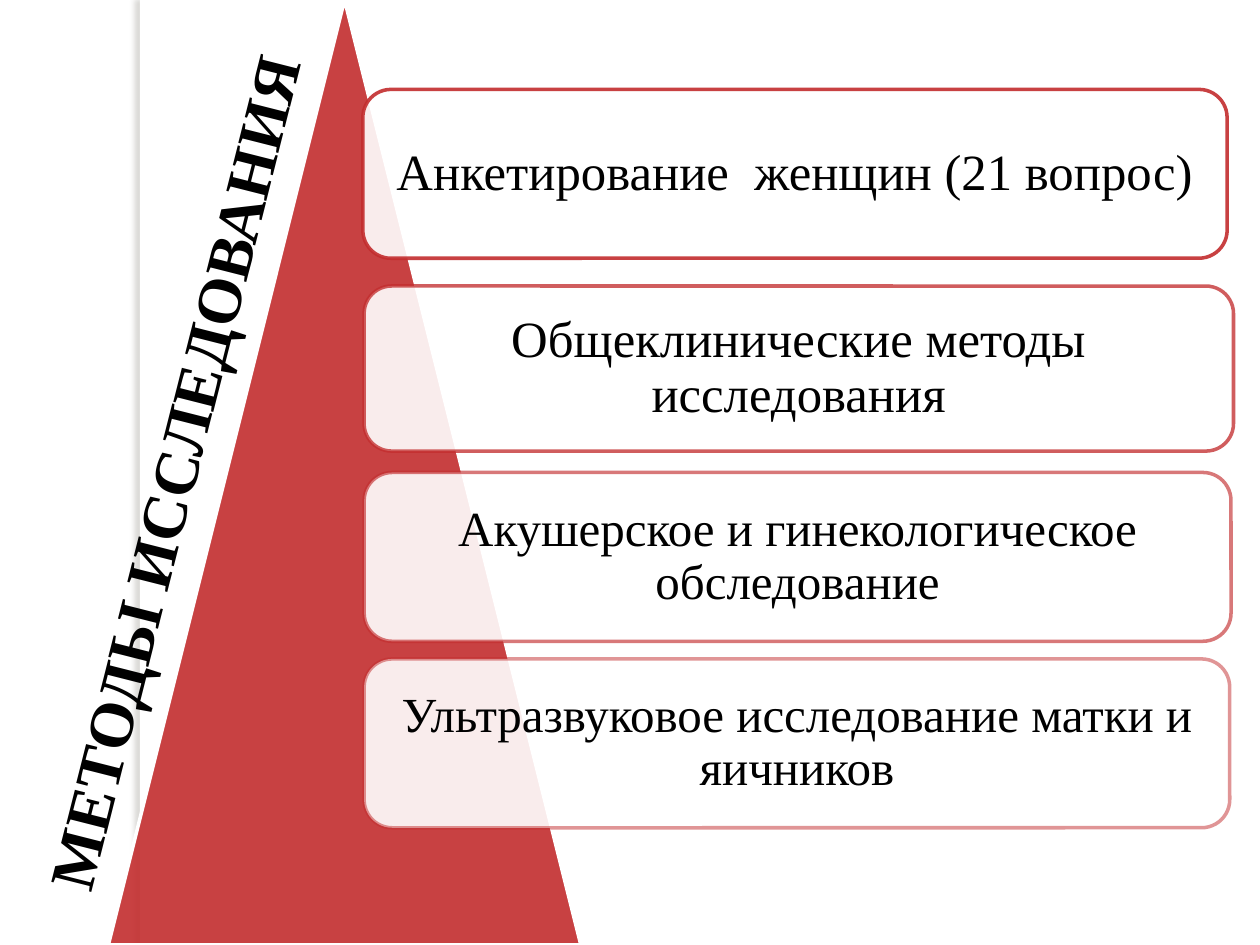
from dataclasses import dataclass

from lxml import etree
from pptx import Presentation
from pptx import util as u
from pptx.dml.color import RGBColor
from pptx.enum import shapes as sh, text as tx
from pptx.oxml.ns import qn

RED, WHITE, BLACK = "C32D2E", "FFFFFF", "000000"
FONT = "Times New Roman"


@dataclass
class Card:
    text: str
    left: float
    top: float
    width: float
    height: float
    size: int
    alpha: int


CARDS = [
    Card("Анкетирование  женщин (21 вопрос)", 2.88, 0.71, 6.86, 1.34, 29, 90),
    Card("Общеклинические методы исследования", 2.89, 2.27, 6.9, 1.31, 29, 77),
    Card("Акушерское и гинекологическое обследование",
         2.89, 3.75, 6.88, 1.34, 28, 63),
    Card("Ультразвуковое исследование матки и яичников",
         2.89, 5.23, 6.87, 1.34, 28, 50),
]


def paint(fill, color: str, alpha: int = 100) -> None:
    """Make a fill solid, with opacity in percent."""
    fill.solid()
    fill.fore_color.rgb = RGBColor.from_string(color)
    if alpha < 100:
        node = fill._xPr.find(qn("a:solidFill"))[0]
        etree.SubElement(node, qn("a:alpha"), val=str(alpha * 1000))


def place(shape, left: float, top: float, width: float, height: float) -> None:
    shape.left, shape.top = u.Inches(left), u.Inches(top)
    shape.width, shape.height = u.Inches(width), u.Inches(height)


def add_form(slide, kind, box: tuple, alpha: int = 100, color: str = WHITE):
    shape = slide.shapes.add_shape(kind, 0, 0, 0, 0)
    place(shape, *box)
    shape.shadow.inherit = False
    paint(shape.fill, color, alpha)
    return shape


def write(shape, words: str, size: int, bold: bool = False) -> None:
    """Set centred text in the slide's font."""
    frame = shape.text_frame
    frame.text = words
    frame.vertical_anchor = tx.MSO_ANCHOR.MIDDLE
    para = frame.paragraphs[0]
    para.alignment = tx.PP_ALIGN.CENTER
    font = para.runs[0].font
    font.name, font.size, font.bold = FONT, u.Pt(size), bold
    paint(font.fill, BLACK)


def add_strip(slide) -> None:
    """Draw the white side strip that casts a shadow to the left."""
    strip = add_form(slide, sh.MSO_SHAPE.RECTANGLE, (1.11, 0, 0.08, 7.5))
    strip.line.fill.background()
    effects = strip._element.spPr.find(qn("a:effectLst"))
    shadow = etree.SubElement(
        effects, qn("a:outerShdw"), blurRad=str(u.Pt(3)), dist=str(u.Pt(3)),
        dir="10800000", algn="tl", rotWithShape="0")
    tint = etree.SubElement(shadow, qn("a:srgbClr"), val="736F63")
    etree.SubElement(tint, qn("a:alpha"), val="25000")


def add_peak(slide) -> None:
    peak = add_form(slide, sh.MSO_SHAPE.ISOSCELES_TRIANGLE,
                    (0.86, 0, 3.75, 7.5), 90, RED)
    paint(peak.line.fill, WHITE)
    peak.line.width = u.Pt(2)


def add_card(slide, card: Card) -> None:
    box = (card.left, card.top, card.width, card.height)
    shape = add_form(slide, sh.MSO_SHAPE.ROUNDED_RECTANGLE, box, 90)
    paint(shape.line.fill, RED, card.alpha)
    shape.line.width = u.Pt(2)
    write(shape, card.text, card.size)
    frame = shape.text_frame
    frame.word_wrap = True
    frame.margin_left = frame.margin_right = u.Inches(0.12)
    frame.margin_top = frame.margin_bottom = u.Inches(0.12)
    frame.paragraphs[0].line_spacing = 0.9


def set_title(slide) -> None:
    """Turn the title along the peak's left edge and bring it to the front."""
    title = slide.shapes.title
    place(title, -2.16, 3.39, 7.06, 0.71)
    title.rotation = 284.2
    write(title, "МЕТОДЫ ИССЛЕДОВАНИЯ", 36, True)
    title.text_frame.word_wrap = False
    title.text_frame.auto_size = tx.MSO_AUTO_SIZE.NONE
    slide.shapes._spTree.append(title._element)


def main() -> None:
    deck = Presentation()
    deck.slide_width, deck.slide_height = u.Inches(10), u.Inches(7.5)
    slide = deck.slides.add_slide(deck.slide_layouts[5])
    paint(slide.background.fill, WHITE)
    add_strip(slide)
    add_peak(slide)
    for card in CARDS:
        add_card(slide, card)
    set_title(slide)
    deck.save("out.pptx")


if __name__ == "__main__":
    main()
